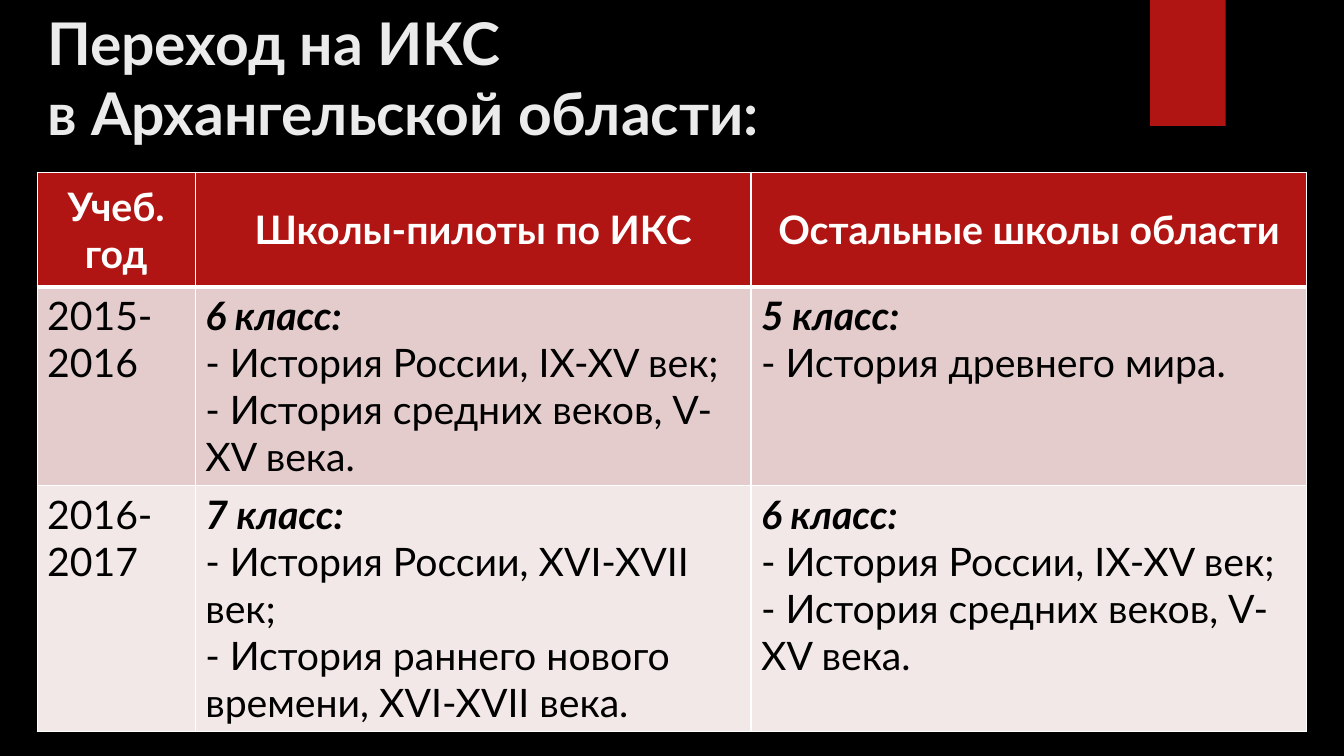
from dataclasses import dataclass

from lxml.etree import SubElement
from pptx import Presentation
from pptx.dml.color import RGBColor
from pptx.enum.shapes import MSO_SHAPE
from pptx.enum.text import MSO_ANCHOR, MSO_AUTO_SIZE, PP_ALIGN
from pptx.oxml.ns import qn
from pptx.util import Pt


@dataclass(frozen=True)
class Theme:
    font: str = "Lato"
    background: str = "000000"
    accent: str = "B01513"
    title: str = "EBEBEB"
    light: str = "FFFFFF"
    dark: str = "000000"
    bands: tuple = ("E4CCCC", "F2E8E7")
    title_size: int = 42
    table_size: int = 28


THEME = Theme()
COLUMN_WIDTHS = (113, 397, 397)
ROW_HEIGHTS = (82, 142, 175)
HEADINGS = ("Учеб. год", "Школы-пилоты по ИКС", "Остальные школы области")
HISTORY_TO_XV = (
    "6 класс:",
    "- История России, IX-XV век;",
    "- История средних веков, V- XV века.",
)
YEARS = (
    ("2015-2016", HISTORY_TO_XV, ("5 класс:", "- История древнего мира.")),
    (
        "2016-2017",
        (
            "7 класс:",
            "- История России, XVI-XVII век;",
            "- История раннего нового времени, XVI-XVII века.",
        ),
        HISTORY_TO_XV,
    ),
)


def set_fill(fill, color):
    fill.solid()
    fill.fore_color.rgb = RGBColor.from_string(color)


def set_font(font, size, color, bold=False, italic=False):
    settings = {"name": THEME.font, "size": Pt(size), "bold": bold, "italic": italic}
    for attribute, value in settings.items():
        setattr(font, attribute, value)
    font.color.rgb = RGBColor.from_string(color)


def add_title(slide, text):
    title = slide.shapes.title
    box = {"left": Pt(26.5), "top": Pt(0), "width": Pt(741), "height": Pt(110)}
    for attribute, value in box.items():
        setattr(title, attribute, value)
    frame = title.text_frame
    frame.text = text
    frame.auto_size = MSO_AUTO_SIZE.NONE
    frame.vertical_anchor = MSO_ANCHOR.MIDDLE
    heading = frame.paragraphs[0]
    heading.alignment = PP_ALIGN.LEFT
    set_font(heading.font, THEME.title_size, THEME.title, bold=True)


def add_ribbon(slide):
    ribbon = slide.shapes.add_shape(
        MSO_SHAPE.RECTANGLE, Pt(821.5), Pt(0), Pt(54), Pt(90)
    )
    ribbon.shadow.inherit = False
    set_fill(ribbon.fill, THEME.accent)
    ribbon.line.fill.background()


def set_borders(cell, top=1, bottom=1):
    properties = cell._tc.get_or_add_tcPr()
    for side, width in {"L": 1, "R": 1, "T": top, "B": bottom}.items():
        line = SubElement(properties, qn(f"a:ln{side}"), w=str(Pt(width)))
        solid = SubElement(line, qn("a:solidFill"))
        SubElement(solid, qn("a:srgbClr"), val=THEME.light)


def fill_heading(cell, text):
    set_borders(cell, bottom=3)
    set_fill(cell.fill, THEME.accent)
    cell.vertical_anchor = MSO_ANCHOR.MIDDLE
    cell.text = text
    heading = cell.text_frame.paragraphs[0]
    heading.alignment = PP_ALIGN.CENTER
    set_font(heading.font, THEME.table_size, THEME.light, bold=True)


def fill_body(cell, lines, band, top, has_grade):
    """Write one line per paragraph; a leading grade is bold italic."""
    set_borders(cell, top=top)
    set_fill(cell.fill, band)
    cell.text = "\n".join(lines)
    for index, paragraph in enumerate(cell.text_frame.paragraphs):
        is_grade = has_grade and index == 0
        set_font(paragraph.font, THEME.table_size, THEME.dark, is_grade, is_grade)


def add_schedule(slide):
    schedule = slide.shapes.add_table(
        len(ROW_HEIGHTS), len(COLUMN_WIDTHS), Pt(26.5), Pt(123),
        Pt(sum(COLUMN_WIDTHS)), Pt(sum(ROW_HEIGHTS)),
    ).table
    for column, width in zip(schedule.columns, COLUMN_WIDTHS):
        column.width = Pt(width)
    for row, height in zip(schedule.rows, ROW_HEIGHTS):
        row.height = Pt(height)
    for column, heading in enumerate(HEADINGS):
        fill_heading(schedule.cell(0, column), heading)
    for row, (year, pilots, others) in enumerate(YEARS, start=1):
        band = THEME.bands[row - 1]
        top = 3 if row == 1 else 1
        for column, lines in enumerate(((year,), pilots, others)):
            fill_body(schedule.cell(row, column), lines, band, top, column > 0)


def main():
    presentation = Presentation()
    presentation.slide_width = Pt(960)
    presentation.slide_height = Pt(540)
    slide = presentation.slides.add_slide(presentation.slide_layouts[5])
    set_fill(slide.background.fill, THEME.background)
    add_ribbon(slide)
    add_title(slide, "Переход на ИКС\vв Архангельской области:")
    add_schedule(slide)
    presentation.save("out.pptx")


if __name__ == "__main__":
    main()
